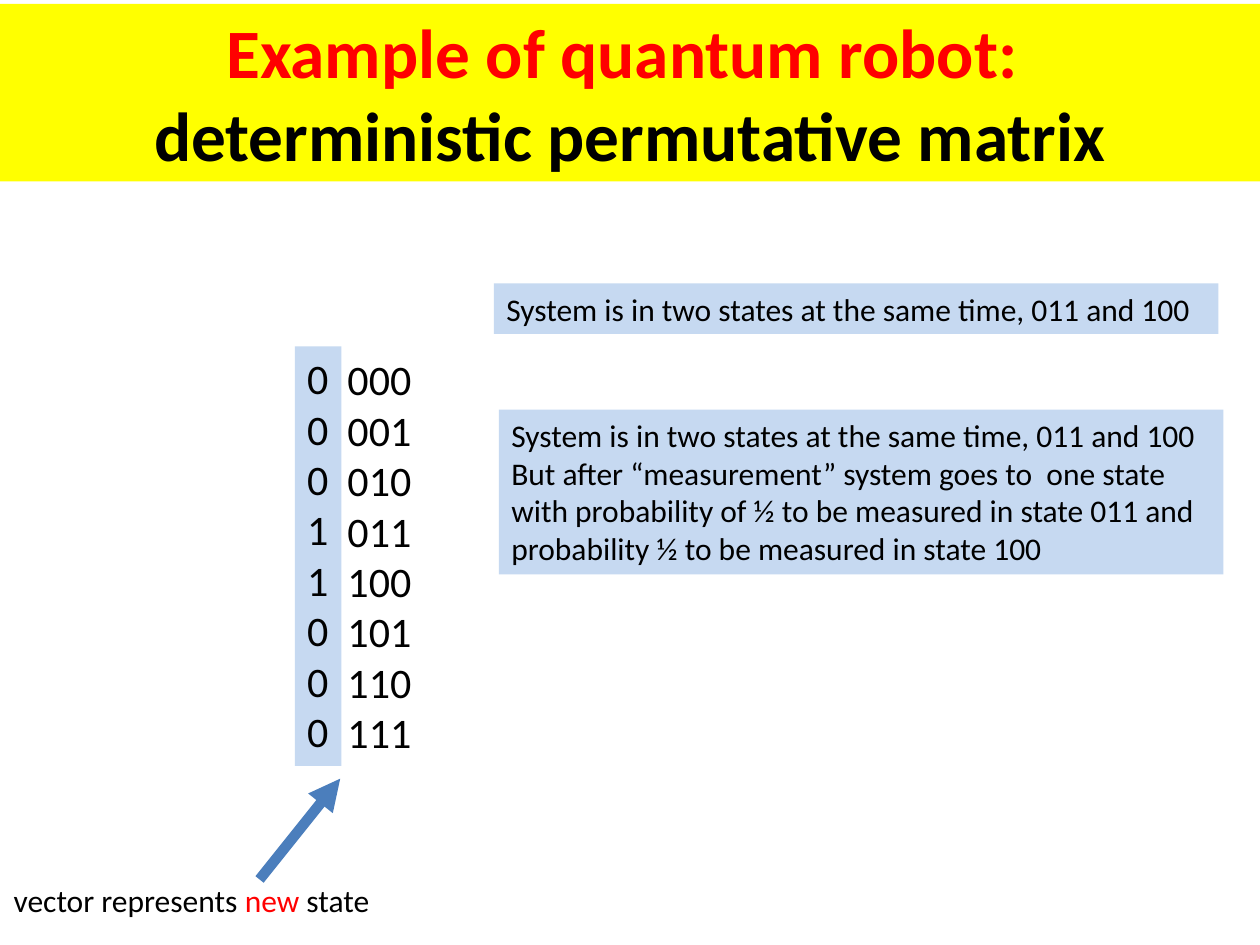
from lxml.etree import SubElement
from pptx import Presentation
from pptx.dml.color import RGBColor
from pptx.enum.shapes import MSO_CONNECTOR as Connector, MSO_SHAPE as Preset
from pptx.enum.text import MSO_ANCHOR as Anchor, MSO_AUTO_SIZE as AutoSize, PP_ALIGN as Align
from pptx.oxml.ns import qn
from pptx.util import Inches, Pt

COLORS = {
    "banner": "FFFF00",
    "panel": "C6D9F1",
    "arrow": "4B7EBC",
    "accent": "FF0000",
    "text": "000000",
}
FONT = "Calibri"
STATES = [f"{number:03b}" for number in range(8)]
ACTIVE_STATES = ("011", "100")
TWO_STATES = "System is in two states at the same time, 011 and 100"
MEASUREMENT = (
    "But after “measurement” system goes to  one state with probability of ½ "
    "to be measured in state 011 and probability ½ to be measured in state 100"
)


def rgb(name):
    return RGBColor.from_string(COLORS[name])


def paint(shape, color):
    shape.fill.solid()
    shape.fill.fore_color.rgb = rgb(color)


def place(shape, left, top, width, height):
    shape.left, shape.top = Inches(left), Inches(top)
    shape.width, shape.height = Inches(width), Inches(height)


def write(shape, paragraphs, size=18, bold=False, align=Align.LEFT, anchor=Anchor.TOP):
    frame = shape.text_frame
    frame.word_wrap = True
    frame.auto_size = AutoSize.NONE
    frame.vertical_anchor = anchor
    for index, content in enumerate(paragraphs):
        paragraph = frame.paragraphs[0] if index == 0 else frame.add_paragraph()
        paragraph.alignment = align
        parts = [(content, "text")] if isinstance(content, str) else content
        for words, color in parts:
            if words == "\n":
                paragraph.add_line_break()
                continue
            run = paragraph.add_run()
            run.text = words
            run.font.name = FONT
            run.font.size = Pt(size)
            run.font.bold = bold
            run.font.color.rgb = rgb(color)


def add_title(slide):
    title = slide.shapes.title
    place(title, 0, 0.03, 10, 1.41)
    paint(title, "banner")
    heading = [
        ("Example of quantum robot: ", "accent"),
        ("\n", "text"),
        ("deterministic permutative matrix", "text"),
    ]
    write(title, [heading], size=39.6, bold=True, align=Align.CENTER, anchor=Anchor.MIDDLE)


def add_panel(slide, box, paragraphs, **style):
    panel = slide.shapes.add_shape(Preset.RECTANGLE, *map(Inches, box))
    panel.shadow.inherit = False
    paint(panel, "panel")
    panel.line.fill.background()
    write(panel, paragraphs, **style)


def add_label(slide, box, paragraphs, **style):
    label = slide.shapes.add_textbox(*map(Inches, box))
    write(label, paragraphs, **style)


def add_arrow(slide, start, end):
    arrow = slide.shapes.add_connector(Connector.STRAIGHT, *map(Inches, start + end))
    arrow.line.color.rgb = rgb("arrow")
    arrow.line.width = Pt(6)
    SubElement(arrow.line._get_or_add_ln(), qn("a:tailEnd"), type="triangle")
    SubElement(arrow._element.spPr, qn("a:effectLst"))


def main():
    deck = Presentation()
    deck.slide_width, deck.slide_height = Inches(10), Inches(7.5)
    slide = deck.slides.add_slide(deck.slide_layouts[5])

    add_title(slide)
    amplitudes = ["1" if state in ACTIVE_STATES else "0" for state in STATES]
    add_panel(slide, (2.34, 2.75, 0.37, 3.33), amplitudes, size=24)
    caption = [("vector represents ", "text"), ("new", "accent"), (" state", "text")]
    add_label(slide, (0.01, 6.94, 3.22, 0.4), [caption])
    add_arrow(slide, (2.06, 6.98), (2.7, 6.18))
    add_label(slide, (2.66, 2.76, 0.83, 3.33), STATES, size=24)
    add_panel(slide, (3.92, 2.25, 5.75, 0.4), [TWO_STATES])
    add_panel(slide, (3.96, 3.25, 5.75, 1.31), [TWO_STATES, MEASUREMENT])

    deck.save("out.pptx")


if __name__ == "__main__":
    main()
